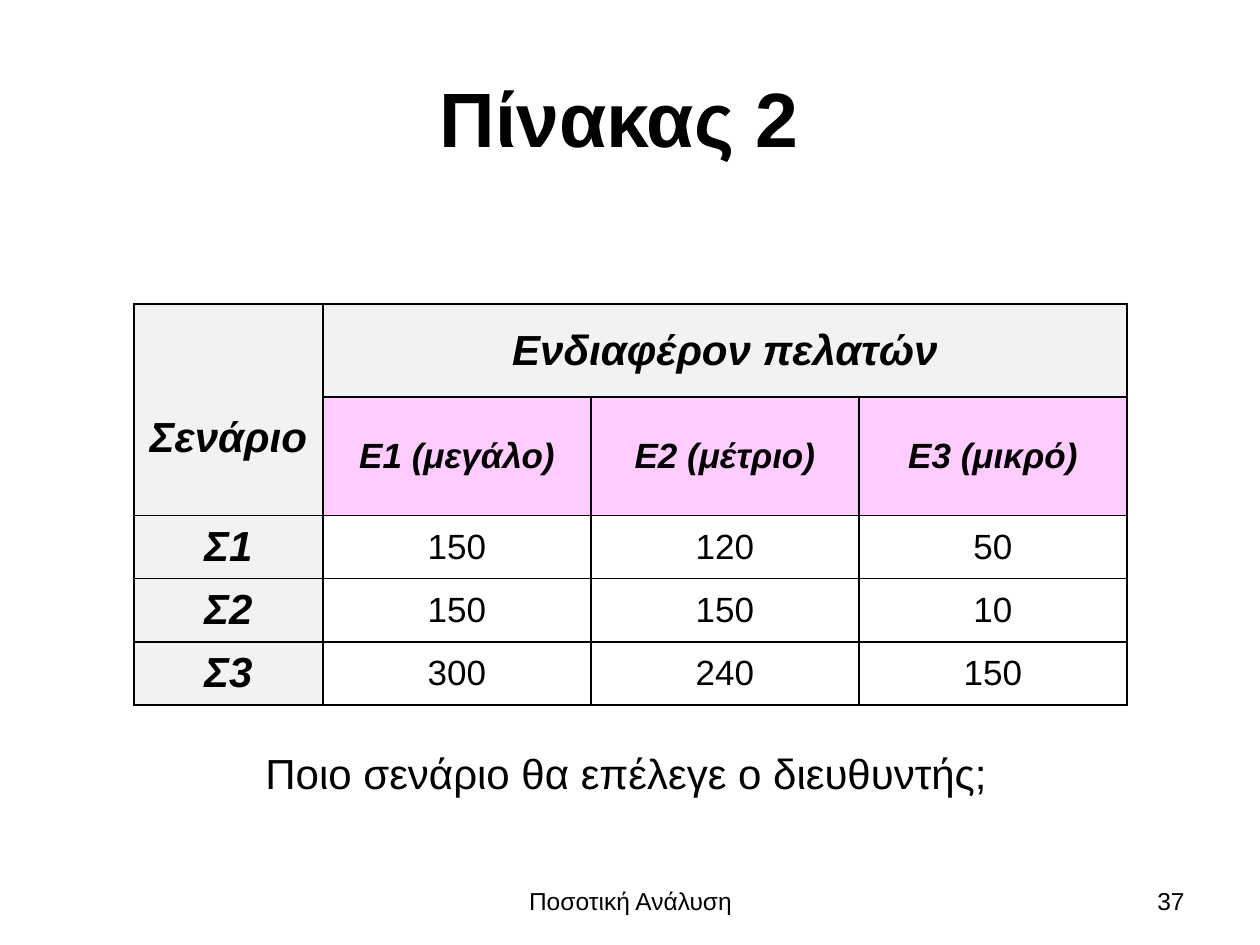
from lxml import etree
from pptx import Presentation
from pptx import util as u
from pptx.dml.color import RGBColor
from pptx.enum import text
from pptx.oxml.ns import qn

BLACK = RGBColor(0x00, 0x00, 0x00)
GREY = RGBColor(0xF2, 0xF2, 0xF2)
PINK = RGBColor(0xFF, 0xCC, 0xFF)
CENTER, LEFT, RIGHT = text.PP_ALIGN.CENTER, text.PP_ALIGN.LEFT, text.PP_ALIGN.RIGHT
MIDDLE, TOP = text.MSO_ANCHOR.MIDDLE, text.MSO_ANCHOR.TOP


def px(n):
    return u.Emu(round(n * 914400 / 126))


def write(tf, content, align, **fmt):
    p = tf.paragraphs[0]
    p.alignment = align
    r = p.add_run()
    r.text = content
    r.font.color.rgb = BLACK
    for name, value in {"name": "Arial", **fmt}.items():
        setattr(r.font, name, value)


prs = Presentation()
prs.slide_width, prs.slide_height = px(1260), px(945)
s = prs.slides.add_slide(prs.slide_layouts[6])

boxes = [
    ((63, 38, 1134, 158), "Πίνακας 2 ", CENTER, MIDDLE, 44, True),
    ((253, 741, 767, 63), "Ποιο σενάριο θα επέλεγε ο διευθυντής;", LEFT, TOP, 24, False),
    ((431, 876, 399, 50), "Ποσοτική Ανάλυση", CENTER, MIDDLE, 14, False),
    ((903, 876, 294, 50), "37", RIGHT, MIDDLE, 14, False),
]
for place, content, align, anchor, size, bold in boxes:
    tf = s.shapes.add_textbox(*map(px, place)).text_frame
    tf.word_wrap = True
    tf.vertical_anchor = anchor
    write(tf, content, align, size=u.Pt(size), bold=bold)

rows = [
    ["Σενάριο", "Ενδιαφέρον πελατών", "", ""],
    ["", "Ε1 (μεγάλο)", "Ε2 (μέτριο)", "Ε3 (μικρό)"],
    ["Σ1", "150", "120", "50"],
    ["Σ2", "150", "150", "10"],
    ["Σ3", "300", "240", "150"],
]
widths = [189, 268, 268, 268]
heights = [93, 114, 59, 60, 60]
frame = s.shapes.add_table(len(rows), len(widths), px(134), px(304),
                           px(sum(widths)), px(sum(heights)))
tbl = frame.table
tbl.first_row = tbl.horz_banding = False
for col, width in zip(tbl.columns, widths):
    col.width = px(width)
for row, height in zip(tbl.rows, heights):
    row.height = px(height)
tbl.cell(0, 0).merge(tbl.cell(1, 0))
tbl.cell(0, 1).merge(tbl.cell(0, 3))

for i, row in enumerate(rows):
    for j, content in enumerate(row):
        cell = tbl.cell(i, j)
        cell.vertical_anchor = MIDDLE
        heading = i == 0 or j == 0
        if heading or i == 1:
            cell.fill.solid()
            cell.fill.fore_color.rgb = GREY if heading else PINK
        else:
            cell.fill.background()
        if content:
            emphasis = heading or i == 1
            write(cell.text_frame, content, CENTER, size=u.Pt(24 if heading else 20),
                  bold=emphasis, italic=emphasis)
        tcPr = cell._tc.get_or_add_tcPr()
        for k, side in enumerate(("lnL", "lnR", "lnT", "lnB")):
            ln = etree.Element(qn(f"a:{side}"), w=str(u.Pt(1)))
            fill = etree.SubElement(ln, qn("a:solidFill"))
            etree.SubElement(fill, qn("a:srgbClr"), val=str(BLACK))
            tcPr.insert(k, ln)

scenario = tbl.cell(0, 0)
scenario.margin_top = px(62)
scenario.margin_left = scenario.margin_right = px(6)

prs.save("out.pptx")
